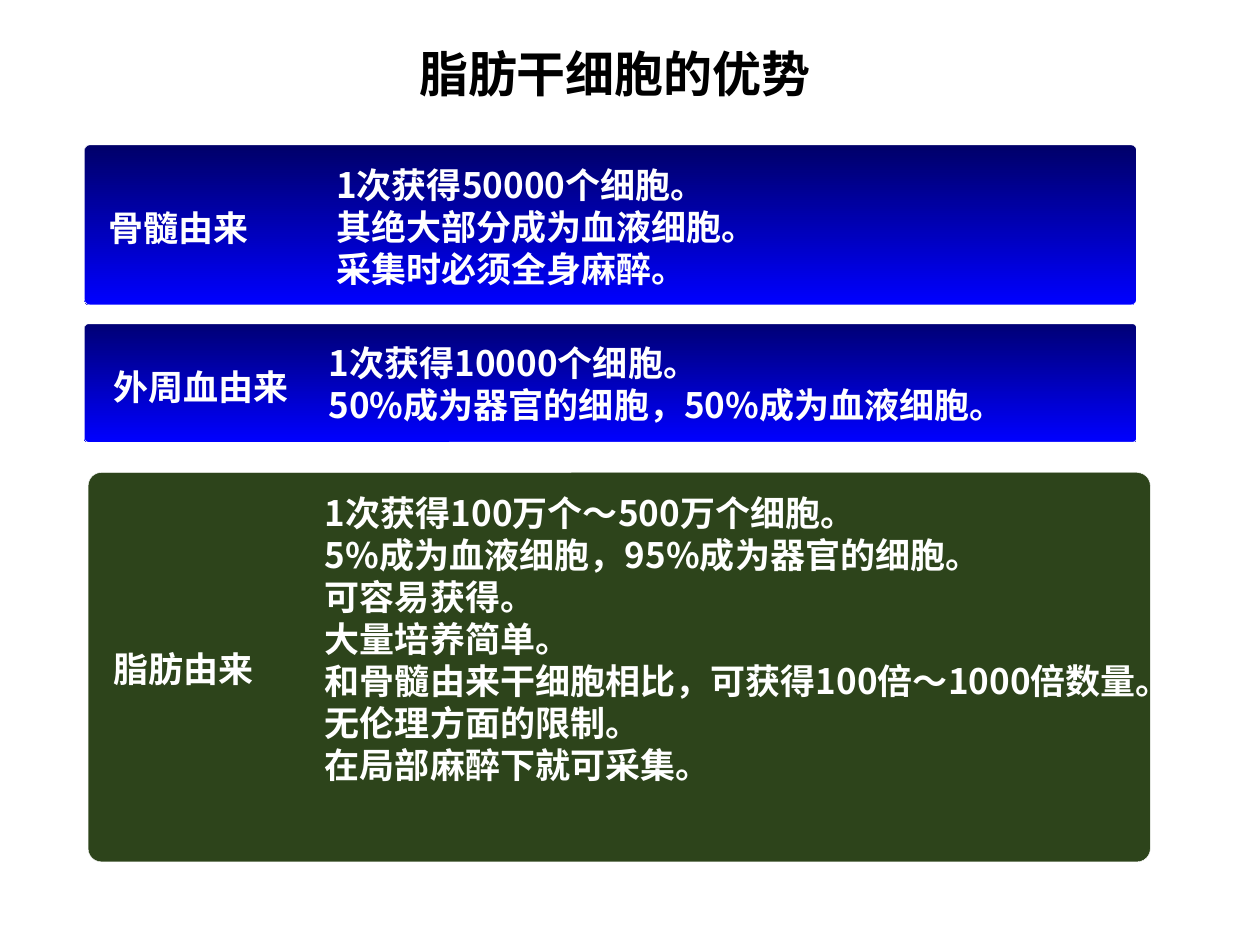
from pptx import Presentation
from pptx.dml.color import RGBColor
from pptx.enum.shapes import MSO_SHAPE
from pptx.enum.text import MSO_ANCHOR, PP_ALIGN
from pptx.oxml.ns import qn
from pptx.util import Inches, Pt
from lxml.etree import SubElement


def tint(code):
    return RGBColor.from_string(code)


class Page:
    font = "Noto Sans CJK SC"
    dark = "000000"
    light = "FFFFFF"

    def __init__(self, deck):
        self.slide = deck.slides.add_slide(deck.slide_layouts[5])

    def run(self, para, text, size, color):
        run = para.add_run()
        run.text = text
        run.font.name = self.font
        run.font.size = Pt(size)
        run.font.bold = True
        run.font.color.rgb = tint(color)
        face = SubElement(run.font._element, qn("a:ea"))
        face.set("typeface", self.font)

    def title(self, text, left, top, width, height):
        shape = self.slide.shapes.title
        shape.left, shape.top = Inches(left), Inches(top)
        shape.width, shape.height = Inches(width), Inches(height)
        frame = shape.text_frame
        frame.vertical_anchor = MSO_ANCHOR.MIDDLE
        para = frame.paragraphs[0]
        para.alignment = PP_ALIGN.CENTER
        self.run(para, text, 28, self.dark)

    def panel(self, colors, left, top, width, height):
        shape = self.slide.shapes.add_shape(
            MSO_SHAPE.ROUNDED_RECTANGLE,
            Inches(left), Inches(top), Inches(width), Inches(height))
        shape.adjustments[0] = 0.034
        shape.shadow.inherit = False
        shape.line.color.rgb = tint(self.light)
        shape.line.width = Pt(0.25)
        if len(colors) == 1:
            shape.fill.solid()
            shape.fill.fore_color.rgb = tint(colors[0])
            return
        shape.fill.gradient()
        shape.fill.gradient_angle = 270
        for stop, color in zip(shape.fill.gradient_stops, colors):
            stop.color.rgb = tint(color)

    def text(self, lines, left, top, width, height, space=1.0):
        box = self.slide.shapes.add_textbox(
            Inches(left), Inches(top), Inches(width), Inches(height))
        frame = box.text_frame
        frame.word_wrap = True
        for i, line in enumerate(lines):
            para = frame.add_paragraph() if i else frame.paragraphs[0]
            para.line_spacing = space
            self.run(para, line, 20, self.light)


def main():
    deck = Presentation()
    deck.slide_width, deck.slide_height = Inches(10), Inches(7.5)
    page = Page(deck)
    page.title("脂肪干细胞的优势", 1.69, 0.26, 6.38, 0.63)

    groups = [
        (["000069", "0000FF"], (0.67, 1.15, 8.35, 1.27),
         "骨髓由来", (0.76, 1.56, 1.55, 0.47),
         ["1次获得50000个细胞。",
          "其绝大部分成为血液细胞。",
          "采集时必须全身麻醉。"], (2.57, 1.25, 5.2, 1.1)),
        (["000076", "0000FF"], (0.67, 2.57, 8.35, 0.94),
         "外周血由来", (0.8, 2.82, 1.88, 0.47),
         ["1次获得10000个细胞。",
          "50%成为器官的细胞，50%成为血液细胞。"],
         (2.51, 2.66, 5.96, 0.77)),
        (["2D441B"], (0.7, 3.75, 8.43, 3.09),
         "脂肪由来", (0.8, 5.06, 1.88, 0.47),
         ["1次获得100万个～500万个细胞。",
          "5%成为血液细胞，95%成为器官的细胞。",
          "可容易获得。",
          "大量培养简单。",
          "和骨髓由来干细胞相比，可获得100倍～1000倍数量。",
          "无伦理方面的限制。",
          "在局部麻醉下就可采集。"], (2.48, 3.85, 6.65, 2.77)),
    ]
    for colors, frame, label, side, facts, main_box in groups:
        page.panel(colors, *frame)
        page.text([label], *side, space=1.1)
        page.text(facts, *main_box)

    deck.save("out.pptx")


if __name__ == "__main__":
    main()
